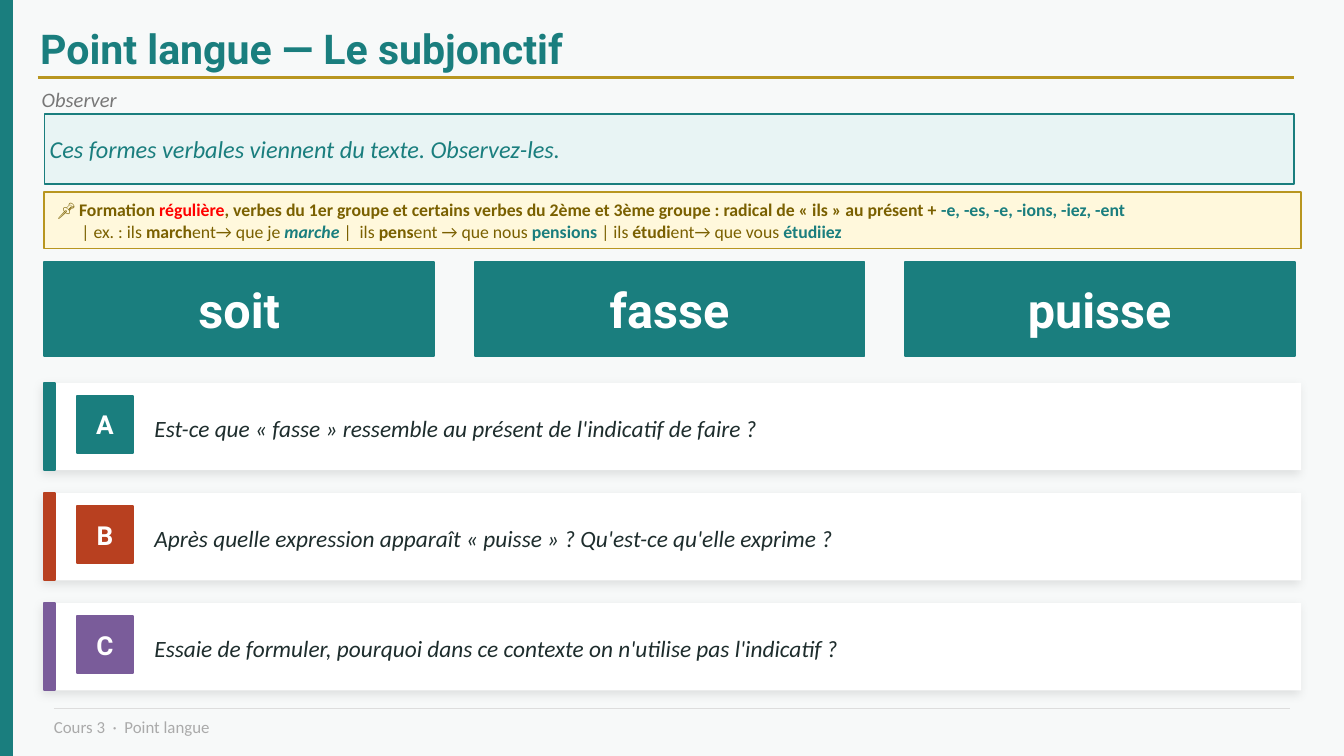
import pptx
import pptx.dml.color
import pptx.enum.shapes
import pptx.enum.text
import pptx.oxml
import pptx.oxml.ns
import pptx.util
from pptx.util import Cm

TEAL, GOLD, RUST, VIOLET = "1A7E7E", "B89620", "B84020", "7A5C9A"
OLIVE, RED, WHITE, INK = "7A6000", "FF0000", "FFFFFF", "1E2D2D"
LEFT, WIDTH = 0.84, 23.75

SHADOW = (
    f'<a:effectLst {pptx.oxml.ns.nsdecls("a")}>'
    '<a:outerShdw blurRad="63500" dist="25400" dir="8100000" algn="bl" rotWithShape="0">'
    '<a:srgbClr val="000000"><a:alpha val="9000"/></a:srgbClr>'
    '</a:outerShdw></a:effectLst>'
)
NO_EFFECT = f'<a:effectLst {pptx.oxml.ns.nsdecls("a")}/>'


def color(value):
    return pptx.dml.color.RGBColor.from_string(value)


class Lesson:
    heading = "Roboto"
    body = "Calibri"

    def __init__(self, deck, background):
        self.page = deck.slides.add_slide(deck.slide_layouts[5])
        fill = self.page.background.fill
        fill.solid()
        fill.fore_color.rgb = color(background)

    def font(self, paragraph, name, size, ink, bold=False, italic=False):
        font = paragraph.font
        font.name, font.size = name, pptx.util.Pt(size)
        font.bold, font.italic = bold, italic
        font.color.rgb = color(ink)

    def frame(self, box, insets=(0, 0)):
        frame = box.text_frame
        frame.word_wrap = True
        frame.auto_size = pptx.enum.text.MSO_AUTO_SIZE.NONE
        frame.vertical_anchor = pptx.enum.text.MSO_ANCHOR.MIDDLE
        frame.margin_left = frame.margin_right = Cm(insets[0])
        frame.margin_top = frame.margin_bottom = Cm(insets[1])
        return frame

    def put_text(self, box, text, *style, center=False, insets=(0, 0), **flags):
        paragraph = self.frame(box, insets).paragraphs[0]
        paragraph.add_run().text = text
        align = pptx.enum.text.PP_ALIGN
        paragraph.alignment = align.CENTER if center else align.LEFT
        self.font(paragraph, *style, **flags)

    def title(self, text, x, y, width, height):
        box = self.page.shapes.title
        box.left, box.top, box.width, box.height = Cm(x), Cm(y), Cm(width), Cm(height)
        self.put_text(box, text, self.heading, 22, TEAL, bold=True)

    def text(self, text, x, y, width, height, size, ink, italic=False):
        box = self.page.shapes.add_textbox(Cm(x), Cm(y), Cm(width), Cm(height))
        self.put_text(box, text, self.body, size, ink, italic=italic)

    def block(self, x, y, width, height, fill, line=None, weight=1):
        box = self.page.shapes.add_shape(
            pptx.enum.shapes.MSO_SHAPE.RECTANGLE, Cm(x), Cm(y), Cm(width), Cm(height))
        box.shadow.inherit = False
        box.fill.solid()
        box.fill.fore_color.rgb = color(fill)
        if line:
            box.line.color.rgb = color(line)
            box.line.width = pptx.util.Pt(weight)
        else:
            box.line.fill.background()
        return box

    def label(self, text, x, y, width, height, fill, size):
        box = self.block(x, y, width, height, fill, fill)
        self.put_text(box, text, self.heading, size, WHITE, bold=True, center=True)

    def rule(self, x, y, end, ink, weight):
        line = self.page.shapes.add_connector(
            pptx.enum.shapes.MSO_CONNECTOR.STRAIGHT, Cm(x), Cm(y), Cm(end), Cm(y))
        line.line.color.rgb = color(ink)
        line.line.width = pptx.util.Pt(weight)
        line._element.spPr.append(pptx.oxml.parse_xml(NO_EFFECT))

    def grammar_note(self, box, lines):
        frame = self.frame(box, (0.25, 0.08))
        for number, (indent, bold, spans) in enumerate(lines):
            paragraph = frame.add_paragraph() if number else frame.paragraphs[0]
            paragraph.alignment = pptx.enum.text.PP_ALIGN.LEFT
            paragraph._p.get_or_add_pPr().set("marL", str(Cm(indent)))
            self.font(paragraph, self.body, 9.5, OLIVE, bold=bold)
            for text, ink, strong, slanted in spans:
                span = paragraph.add_run()
                span.text = text
                span.font.color.rgb = color(ink)
                span.font.bold, span.font.italic = strong, slanted

    def question(self, letter, text, y, accent):
        card = self.block(LEFT, y, WIDTH, 1.65, WHITE)
        properties = card._element.spPr
        properties.remove(properties.find(pptx.oxml.ns.qn("a:effectLst")))
        properties.append(pptx.oxml.parse_xml(SHADOW))
        self.block(LEFT, y, 0.2, 1.65, accent, accent)
        self.label(letter, 1.45, y + 0.25, 1.07, 1.07, accent, 14)
        self.text(text, 2.92, y + 0.36, 21.21, 0.97, 12.5, INK, italic=True)


def plain(text):
    return text, OLIVE, False, False


def strong(text, ink=OLIVE, slanted=False):
    return text, ink, True, slanted


def main():
    deck = pptx.Presentation()
    deck.slide_width, deck.slide_height = Cm(25.4), Cm(14.29)
    lesson = Lesson(deck, "F7F9F9")

    lesson.block(0, 0, 0.23, 14.29, TEAL, TEAL)
    lesson.title("Point langue — Le subjonctif", 0.76, 0.2, WIDTH, 1.4)
    lesson.rule(0.71, 1.47, 24.46, GOLD, 1.5)
    lesson.text("Observer", 0.79, 1.47, WIDTH, 0.81, 11, "777777", italic=True)

    prompt = lesson.block(LEFT, 2.16, 23.62, 1.32, "E8F4F4", TEAL, 0.8)
    lesson.put_text(prompt, "Ces formes verbales viennent du texte. Observez-les.",
                    lesson.body, 13, TEAL, italic=True, insets=(0.1, 0))

    note = lesson.block(LEFT, 3.63, WIDTH, 1.07, "FFF8DC", GOLD)
    lesson.grammar_note(note, [
        (0, True, [
            strong("📌 Formation "),
            strong("régulière", RED),
            strong(", verbes du 1er groupe et certains verbes du 2ème et 3ème groupe : "
                   "radical de « ils » au présent + "),
            strong("-e, -es, -e, -ions, -iez, -ent", TEAL),
        ]),
        (0.45, False, [
            plain("| ex. : ils "), strong("march"), plain("ent→ que je "),
            strong("marche ", TEAL, True),
            plain("|  ils "), strong("pens"), plain("ent → que nous "),
            strong("pensions", TEAL),
            plain(" | ils "), strong("étudi"), plain("ent→ que vous "),
            strong("étudiiez", TEAL),
        ]),
    ])

    for column, verb in enumerate(["soit", "fasse", "puisse"]):
        lesson.label(verb, LEFT + column * 8.13, 4.95, 7.37, 1.78, TEAL, 26)

    questions = [
        ("A", "Est-ce que « fasse » ressemble au présent de l'indicatif de faire ?", TEAL),
        ("B", "Après quelle expression apparaît « puisse » ? Qu'est-ce qu'elle exprime ?", RUST),
        ("C", "Essaie de formuler, pourquoi dans ce contexte on n'utilise pas l'indicatif ?", VIOLET),
    ]
    for row, (letter, text, accent) in enumerate(questions):
        lesson.question(letter, text, 7.24 + row * 2.08, accent)

    lesson.rule(1.02, 13.39, 24.38, "DDDDDD", 0.75)
    lesson.text("Cours 3  ·  Point langue", 1.02, 13.46, 23.37, 0.56, 9, "AAAAAA")
    deck.save("out.pptx")


if __name__ == "__main__":
    main()
